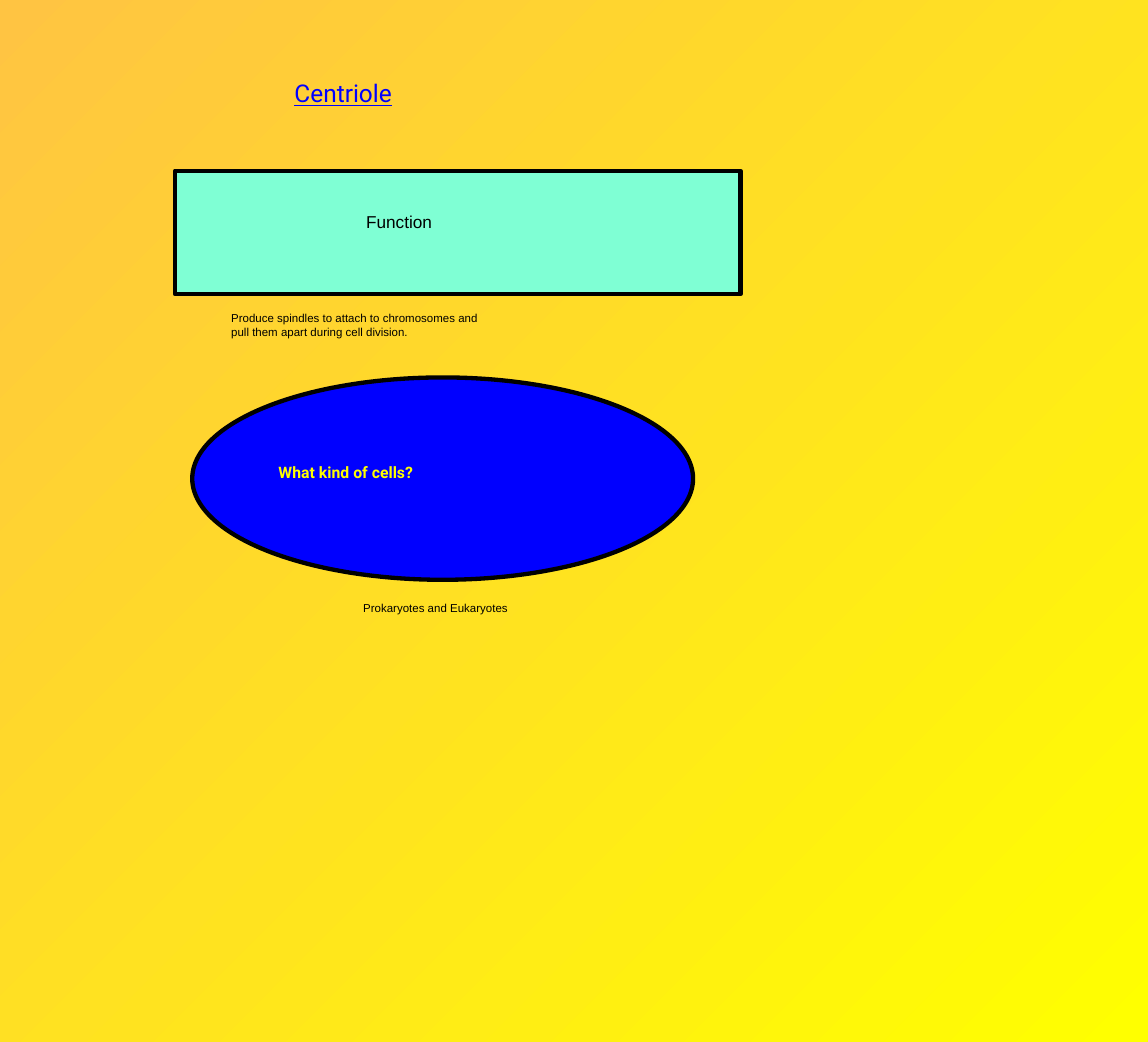
from pptx import Presentation
from pptx.dml.color import RGBColor
from pptx.enum.shapes import MSO_SHAPE
from pptx.enum.text import MSO_ANCHOR, MSO_AUTO_SIZE, PP_ALIGN
from pptx.util import Pt

RECTANGLE = MSO_SHAPE.RECTANGLE
OVAL = MSO_SHAPE.OVAL
TOP = MSO_ANCHOR.TOP
GROW = MSO_AUTO_SIZE.SHAPE_TO_FIT_TEXT
LEFT = PP_ALIGN.LEFT

COLORS = {
    "orange": "FFC442",
    "yellow": "FFFF00",
    "blue": "0000FF",
    "aqua": "7FFFD4",
    "black": "000000",
}


def color(name):
    return RGBColor.from_string(COLORS[name])


class SlideBuilder:
    def __init__(self, slide):
        self.slide = slide
        self.font_name = "Arial"
        self.heading_font_name = "Roboto"
        self.outline_width = Pt(3)

    def background(self, start, end, angle):
        fill = self.slide.background.fill
        fill.gradient()
        fill.gradient_angle = angle
        for stop, name in zip(fill.gradient_stops, (start, end)):
            stop.color.rgb = color(name)

    def place(self, shape, box):
        shape.left, shape.top, shape.width, shape.height = map(Pt, box)

    def set_text(self, shape, text, size, color_name, heading=False, bold=False, underline=False):
        frame = shape.text_frame
        frame.text = text
        frame.word_wrap = True
        frame.auto_size = GROW
        frame.vertical_anchor = TOP
        for paragraph in frame.paragraphs:
            paragraph.alignment = LEFT
            font = paragraph.font
            font.name = self.heading_font_name if heading else self.font_name
            font.size = Pt(size)
            font.bold = bold
            font.underline = underline
            font.color.rgb = color(color_name)

    def title(self, box, text, size, color_name):
        title = self.slide.shapes.title
        self.place(title, box)
        self.set_text(title, text, size, color_name, heading=True, underline=True)

    def text(self, box, text, size, color_name="black", **style):
        text_box = self.slide.shapes.add_textbox(*map(Pt, box))
        self.set_text(text_box, text, size, color_name, **style)

    def panel(self, kind, box, fill_name):
        shape = self.slide.shapes.add_shape(kind, *map(Pt, box))
        shape.shadow.inherit = False
        shape.fill.solid()
        shape.fill.fore_color.rgb = color(fill_name)
        shape.line.color.rgb = color("black")
        shape.line.width = self.outline_width


def main():
    presentation = Presentation()
    presentation.slide_width = Pt(800)
    presentation.slide_height = Pt(726)
    slide = presentation.slides.add_slide(presentation.slide_layouts[5])

    builder = SlideBuilder(slide)
    builder.background("orange", "yellow", 315)
    builder.title((198, 51, 188, 28), "Centriole", 17, "blue")

    builder.panel(RECTANGLE, (122, 119, 394, 86), "aqua")
    builder.text((248, 144, 134, 22), "Function", 12)
    builder.text(
        (154, 213, 372, 27),
        "Produce spindles to attach to chromosomes and\npull them apart during cell division.",
        8,
    )

    builder.panel(OVAL, (134, 263, 349, 141), "blue")
    builder.text((187, 319, 252, 21), "What kind of cells?", 11, "yellow", heading=True, bold=True)
    builder.text((246, 415, 224, 17), "Prokaryotes and Eukaryotes", 8)

    presentation.save("out.pptx")


if __name__ == "__main__":
    main()
